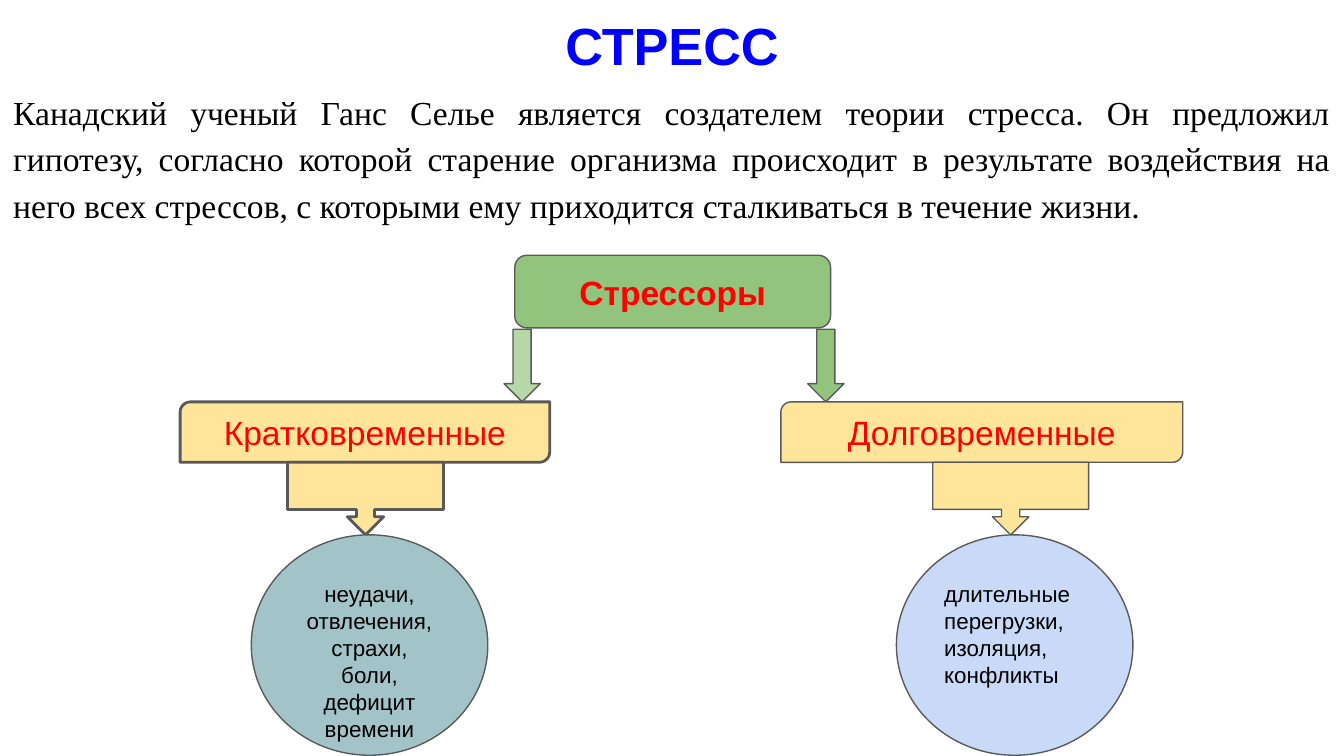
import pptx
import pptx.util
from pptx.dml.color import RGBColor
from pptx.enum.shapes import MSO_SHAPE
from pptx.enum.text import MSO_ANCHOR, PP_ALIGN
from pptx.util import Inches

BLUE = RGBColor(0x00, 0x00, 0xFF)
RED = RGBColor(0xFF, 0x00, 0x00)
BLACK = RGBColor(0x00, 0x00, 0x00)
GRAY = RGBColor(0x59, 0x59, 0x59)
GREEN = RGBColor(0x93, 0xC4, 0x7D)
LIGHT_GREEN = RGBColor(0xB6, 0xD7, 0xA8)
YELLOW = RGBColor(0xFF, 0xE5, 0x99)
TEAL = RGBColor(0xA2, 0xC4, 0xC9)
PALE_BLUE = RGBColor(0xC9, 0xDA, 0xF8)

TITLE = "СТРЕСС"
INTRO = (
    "Канадский ученый Ганс Селье является создателем теории стресса. "
    "Он предложил гипотезу, согласно которой старение организма происходит "
    "в результате воздействия на него всех стрессов, с которыми ему "
    "приходится сталкиваться в течение жизни."
)
ROOT = "Стрессоры"
BRANCHES = [
    {
        "name": "Кратковременные",
        "examples": ["неудачи,", "отвлечения,", "страхи,", "боли,", "дефицит времени"],
        "align": PP_ALIGN.CENTER,
        "arrow_left": 3.75, "arrow_fill": LIGHT_GREEN,
        "label_left": 1.34, "label_width": 2.75,
        "circle_left": 1.87, "circle_fill": TEAL, "line_width": 1.5,
    },
    {
        "name": "Долговременные",
        "examples": ["длительные перегрузки,", "изоляция,", "конфликты"],
        "align": PP_ALIGN.LEFT,
        "arrow_left": 6.01, "arrow_fill": GREEN,
        "label_left": 5.81, "label_width": 2.99,
        "circle_left": 6.67, "circle_fill": PALE_BLUE, "line_width": 0.75,
    },
]

SLIDE_WIDTH = Inches(10)
SLIDE_HEIGHT = SLIDE_WIDTH * 9 // 16
STEP = 0.54
ARROW_TOP = 2.45
LABEL_HEIGHT = 0.45
LABEL_TOP = ARROW_TOP + STEP
CALLOUT_TOP = LABEL_TOP + LABEL_HEIGHT
CIRCLE_TOP = CALLOUT_TOP + STEP
CALLOUT_OFFSET = 0.27

TITLE_FONT = {"name": "Arial", "size": 28, "bold": True, "color": BLUE}
INTRO_FONT = {"name": "Times New Roman", "size": 18, "bold": False, "color": BLACK}
ROOT_FONT = {"name": "Arial", "size": 18, "bold": True, "color": RED}
LABEL_FONT = {**ROOT_FONT, "bold": False}
EXAMPLE_FONT = {"name": "Arial", "size": 12, "bold": False, "color": BLACK}


def write(shape, lines, font, align=PP_ALIGN.CENTER, anchor=MSO_ANCHOR.MIDDLE, spacing=1.0):
    frame = shape.text_frame
    frame_format = {"word_wrap": True, "vertical_anchor": anchor}
    for side in ("left", "top", "right", "bottom"):
        frame_format[f"margin_{side}"] = Inches(0.1)
    for name, value in frame_format.items():
        setattr(frame, name, value)
    frame.text = "\n".join(lines)
    font_format = {"name": font["name"], "size": pptx.util.Pt(font["size"]), "bold": font["bold"]}
    for paragraph in frame.paragraphs:
        paragraph.alignment = align
        paragraph.line_spacing = spacing
        for run in paragraph.runs:
            for name, value in font_format.items():
                setattr(run.font, name, value)
            run.font.color.rgb = font["color"]


def add_text(slide, box, text, font, **options):
    shape = slide.shapes.add_textbox(*map(Inches, box))
    write(shape, [text], font, anchor=MSO_ANCHOR.TOP, **options)


def add_block(slide, kind, box, fill, line_width=0.75, adjustments=()):
    shape = slide.shapes.add_shape(kind, *map(Inches, box))
    shape.shadow.inherit = False
    shape.fill.solid()
    shape.fill.fore_color.rgb = fill
    shape.line.color.rgb = GRAY
    shape.line.width = pptx.util.Pt(line_width)
    for index, value in enumerate(adjustments):
        shape.adjustments[index] = value
    return shape


def add_branch(slide, branch):
    line_width = branch["line_width"]
    add_block(slide, MSO_SHAPE.DOWN_ARROW, (branch["arrow_left"], ARROW_TOP, 0.27, STEP),
              branch["arrow_fill"])
    label = add_block(slide, MSO_SHAPE.ROUND_2_DIAG_RECTANGLE,
                      (branch["label_left"], LABEL_TOP, branch["label_width"], LABEL_HEIGHT),
                      YELLOW, line_width, (0.17, 0))
    write(label, [branch["name"]], LABEL_FONT)
    add_block(slide, MSO_SHAPE.DOWN_ARROW_CALLOUT,
              (branch["circle_left"] + CALLOUT_OFFSET, CALLOUT_TOP, 1.16, STEP),
              YELLOW, line_width, (0.25, 0.25, 0.25, 0.65))
    circle = add_block(slide, MSO_SHAPE.OVAL, (branch["circle_left"], CIRCLE_TOP, 1.76, 1.64),
                       branch["circle_fill"])
    write(circle, branch["examples"], EXAMPLE_FONT, branch["align"], MSO_ANCHOR.TOP)


def main():
    presentation = pptx.Presentation()
    presentation.slide_width = SLIDE_WIDTH
    presentation.slide_height = SLIDE_HEIGHT
    slide = presentation.slides.add_slide(presentation.slide_layouts[6])

    add_text(slide, (0.34, 0, 9.32, STEP), TITLE, TITLE_FONT)
    add_text(slide, (0, STEP, 10, 5.24), INTRO, INTRO_FONT,
             align=PP_ALIGN.JUSTIFY, spacing=1.15)
    root = add_block(slide, MSO_SHAPE.FLOWCHART_ALTERNATE_PROCESS, (3.83, 1.9, 2.35, STEP), GREEN)
    write(root, [ROOT], ROOT_FONT)
    for branch in BRANCHES:
        add_branch(slide, branch)

    presentation.save("out.pptx")


if __name__ == "__main__":
    main()
